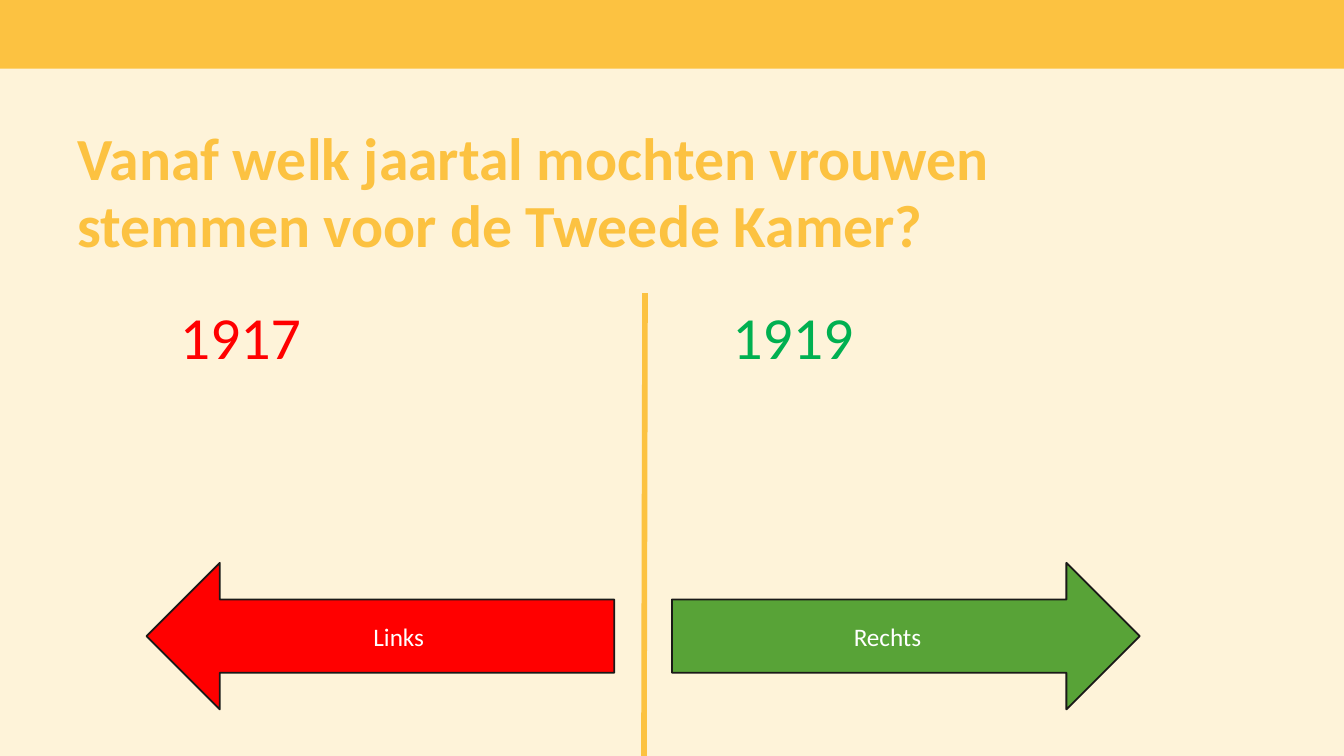
import pptx
import pptx.dml.color
import pptx.enum.shapes
import pptx.enum.text
import pptx.oxml.ns
import pptx.util
from lxml import etree

Cm = pptx.util.Cm
Pt = pptx.util.Pt
Preset = pptx.enum.shapes.MSO_SHAPE

YELLOW = "FCC241"
CREAM = "FEF3D9"
RED = "FF0000"
GREEN = "00B050"
ARROW_GREEN = "58A337"
INK = "1A1918"
WHITE = "FFFFFF"


def color(value):
    return pptx.dml.color.RGBColor.from_string(value)


class QuizSlide:
    font_name = "Calibri"

    def __init__(self, presentation, background):
        self.slide = presentation.slides.add_slide(presentation.slide_layouts[6])
        self.slide.background.fill.solid()
        self.slide.background.fill.fore_color.rgb = color(background)

    def set_text(self, frame, text, size, ink, bold=False):
        frame.text = text
        frame.word_wrap = True
        font = frame.paragraphs[0].runs[0].font
        font.name = self.font_name
        font.size = Pt(size)
        font.bold = bold
        font.color.rgb = color(ink)
        return frame.paragraphs[0]

    def shape(self, preset, left, top, width, height, fill):
        shape = self.slide.shapes.add_shape(
            preset, Cm(left), Cm(top), Cm(width), Cm(height))
        shape.shadow.inherit = False
        shape.fill.solid()
        shape.fill.fore_color.rgb = color(fill)
        shape.line.fill.background()
        return shape

    def arrow(self, preset, left, text, fill):
        arrow = self.shape(preset, left, 10.64, 8.84, 2.77, fill)
        arrow.line.color.rgb = color(INK)
        arrow.line.width = Pt(1)
        arrow.text_frame.vertical_anchor = pptx.enum.text.MSO_ANCHOR.MIDDLE
        label = self.set_text(arrow.text_frame, text, 13.5, WHITE)
        label.alignment = pptx.enum.text.PP_ALIGN.CENTER

    def text_box(self, left, top, width, height):
        return self.slide.shapes.add_textbox(
            Cm(left), Cm(top), Cm(width), Cm(height)).text_frame

    def question(self, text):
        frame = self.text_box(1.47, 2.24, 18.19, 2.49)
        frame.margin_left = frame.margin_right = frame.margin_bottom = 0
        self.set_text(frame, text, 32, YELLOW, bold=True).line_spacing = Pt(36)

    def year(self, left, width, text, ink):
        frame = self.text_box(left, 5.54, width, 1.63)
        self.set_text(frame, text, 32, ink)
        frame.auto_size = pptx.enum.text.MSO_AUTO_SIZE.SHAPE_TO_FIT_TEXT

    def divider(self, start_x, start_y, end_x, end_y):
        divider = self.slide.shapes.add_connector(
            pptx.enum.shapes.MSO_CONNECTOR.STRAIGHT,
            Cm(start_x), Cm(start_y), Cm(end_x), Cm(end_y))
        divider.line.color.rgb = color(YELLOW)
        divider.line.width = Pt(3)
        etree.SubElement(divider._element.spPr, pptx.oxml.ns.qn("a:effectLst"))


def main():
    presentation = pptx.Presentation()
    presentation.slide_width = Cm(25.4)
    presentation.slide_height = Cm(14.29)

    quiz = QuizSlide(presentation, CREAM)
    quiz.shape(Preset.RECTANGLE, 0, 0, 25.4, 1.3, YELLOW)
    quiz.divider(12.19, 5.54, 12.17, 14.29)
    quiz.arrow(Preset.RIGHT_ARROW, 12.7, "Rechts", ARROW_GREEN)
    quiz.arrow(Preset.LEFT_ARROW, 2.77, "Links", RED)
    quiz.question("Vanaf welk jaartal mochten vrouwen stemmen voor de Tweede Kamer?")
    quiz.year(3.15, 7.49, "1917", RED)
    quiz.year(13.59, 9.75, "1919", GREEN)

    presentation.save("out.pptx")


if __name__ == "__main__":
    main()
